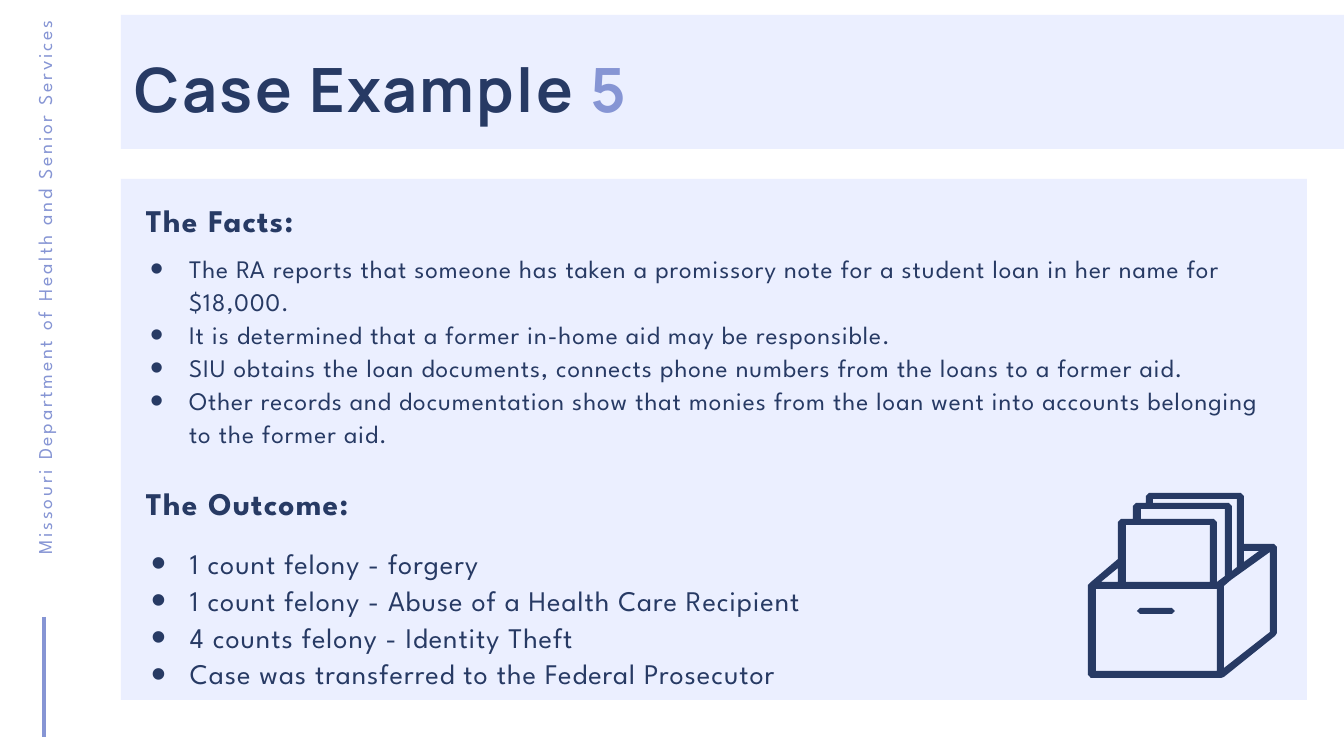
"""Build the Case Example 5 slide with its facts, outcome and filing box."""
from lxml import etree
from pptx import Presentation
from pptx.dml.color import RGBColor
from pptx.enum.shapes import MSO_CONNECTOR, MSO_SHAPE
from pptx.enum.text import MSO_ANCHOR, MSO_AUTO_SIZE, PP_ALIGN
from pptx.oxml.ns import qn
from pptx.util import Pt

LEFT, RIGHT = PP_ALIGN.LEFT, PP_ALIGN.RIGHT
TOP, NO_FIT = MSO_ANCHOR.TOP, MSO_AUTO_SIZE.NONE
RECTANGLE, STRAIGHT = MSO_SHAPE.RECTANGLE, MSO_CONNECTOR.STRAIGHT

COLORS = {"navy": "273A64", "violet": "8695D4", "panel": "EBEFFF"}
TITLE = [("Case Example", "navy"), (" 5", "violet")]
AGENCY = "Missouri Department of Health and Senior Services"
FACTS = [
    "The RA reports that someone has taken a promissory note for a student loan in her name for $18,000.",
    "It is determined that a former in-home aid may be responsible.",
    "SIU obtains the loan documents, connects phone numbers from the loans to a former aid.",
    "Other records and documentation show that monies from the loan went into accounts belonging "
    "to the former aid.",
]
OUTCOMES = [
    "1 count felony - forgery",
    "1 count felony - Abuse of a Health Care Recipient",
    "4 counts felony - Identity Theft",
    "Case was transferred to the Federal Prosecutor",
]
HEADINGS = [("The Facts:", (146, 200, 548, 34)), ("The Outcome:", (146, 483, 863, 34))]
PANELS = [(121, 15, 1223, 134), (121, 179, 1186, 521)]
FILING_BOX = {
    "outline": [(1274, 544), (1277, 547), (1277, 633), (1275, 636), (1224, 677), (1221, 678),
                (1091, 678), (1088, 675), (1088, 585), (1091, 582), (1118, 559), (1118, 522),
                (1121, 519), (1133, 519), (1133, 506), (1136, 503), (1146, 503), (1146, 496),
                (1149, 493), (1241, 493), (1244, 496), (1244, 544)],
    "rim right": [(1259, 551), (1244, 562), (1244, 551)],
    "back paper": [(1153, 499), (1237, 499), (1237, 567), (1232, 571), (1232, 506),
                   (1229, 503), (1153, 503)],
    "middle paper": [(1141, 509), (1225, 509), (1225, 576), (1217, 582), (1217, 522),
                     (1214, 519), (1141, 519)],
    "front paper": [(1126, 525), (1210, 525), (1210, 582), (1126, 582)],
    "rim left": [(1118, 568), (1118, 582), (1101, 582)],
    "front": [(1096, 589), (1217, 589), (1217, 671), (1096, 671)],
    "side": [(1224, 668), (1224, 586), (1231, 580), (1270, 552), (1270, 632)],
    "handle": [(1140, 608), (1172, 608), (1175, 611), (1172, 614), (1140, 614), (1137, 611)],
}

SCALE = 914400 / 126


def px(value):
    return round(value * SCALE)


def rgb(name):
    return RGBColor.from_string(COLORS[name])


def write(box, paragraphs, *, frame, size, pitch, spacing, font="League Spartan",
          bold=False, align=LEFT, inset=3, indent=None):
    """Fill a box with paragraphs, each a list of (text, color) spans."""
    box.left, box.top, box.width, box.height = map(px, frame)
    text = box.text_frame
    text.word_wrap, text.auto_size, text.vertical_anchor = True, NO_FIT, TOP
    text.margin_left = text.margin_right = text.margin_bottom = 0
    text.margin_top = px(inset)
    for index, spans in enumerate(paragraphs):
        para = text.add_paragraph() if index else text.paragraphs[0]
        para.alignment, para.line_spacing = align, Pt(pitch)
        para.space_before = para.space_after = Pt(0)
        if indent:
            add_bullet(para, indent)
        for content, color in spans:
            span = para.add_run()
            span.text = content
            span.font.name, span.font.size, span.font.bold = font, Pt(size), bold
            span.font.color.rgb = rgb(color)
            span._r.get_or_add_rPr().set("spc", str(round(spacing * 100)))


def add_bullet(para, indent):
    properties = para._p.get_or_add_pPr()
    properties.set("marL", str(px(indent)))
    properties.set("indent", str(-px(39)))
    for tag, key, value in [("a:buSzPct", "val", "150000"), ("a:buFont", "typeface", "Arial"),
                            ("a:buChar", "char", "•")]:
        etree.SubElement(properties, qn(tag)).set(key, value)


def paint(shape, fill):
    shape.shadow.inherit = False
    shape.fill.solid()
    shape.fill.fore_color.rgb = rgb(fill)
    shape.line.fill.background()


def add_filing_box(shapes):
    contours = list(FILING_BOX.values())
    builder = shapes.build_freeform(*contours[0][0], scale=SCALE)
    for index, points in enumerate(contours):
        if index:
            builder.move_to(*points[0])
        builder.add_line_segments(points[1:], close=True)
    paint(builder.convert_to_shape(), "navy")


def main():
    deck = Presentation()
    deck.slide_width, deck.slide_height = px(1344), px(756)
    page = deck.slides.add_slide(deck.slide_layouts[3])
    shapes = page.shapes
    title, facts, outcomes = shapes.title, page.placeholders[1], page.placeholders[2]

    for frame in PANELS:
        paint(shapes.add_shape(RECTANGLE, *map(px, frame)), "panel")
    for holder in (title, facts, outcomes):
        shapes.element.append(holder.element)

    write(title, [TITLE], frame=(135, 50, 1047, 67), size=34.9, pitch=38.4,
          spacing=1.36, font="Manrope", bold=True, inset=7)
    write(facts, [[(item, "navy")] for item in FACTS], frame=(146, 248, 1140, 197),
          size=14.4, pitch=18.8, spacing=0.57, indent=43)
    write(outcomes, [[(item, "navy")] for item in OUTCOMES], frame=(146, 540, 771, 147),
          size=16.2, pitch=21.1, spacing=0.57, indent=44)
    for heading, frame in HEADINGS:
        write(shapes.add_textbox(0, 0, 0, 0), [[(heading, "navy")]], frame=frame,
              size=18, pitch=19.8, spacing=0.7, bold=True, inset=4)

    agency = shapes.add_textbox(0, 0, 0, 0)
    write(agency, [[(AGENCY, "violet")]], frame=(-259, 313, 605, 20),
          size=11.2, pitch=11.2, spacing=1.56, align=RIGHT)
    agency.rotation = 270

    rule = shapes.add_connector(STRAIGHT, px(44), px(617), px(44), px(737))
    rule.line.color.rgb = rgb("violet")
    rule.line.width = Pt(1.8)
    etree.SubElement(rule.element.spPr, qn("a:effectLst"))

    add_filing_box(shapes)
    deck.save("out.pptx")


if __name__ == "__main__":
    main()
